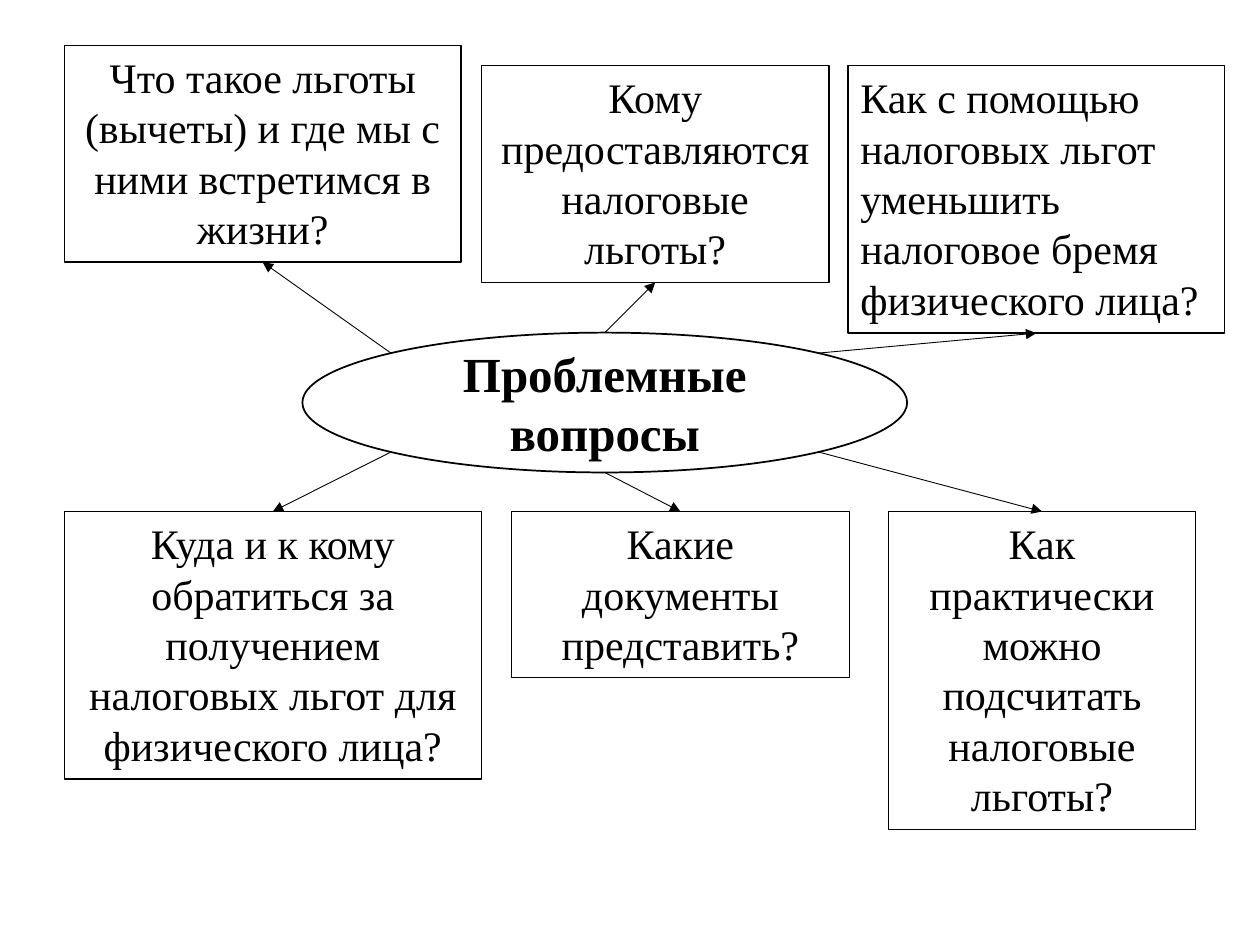
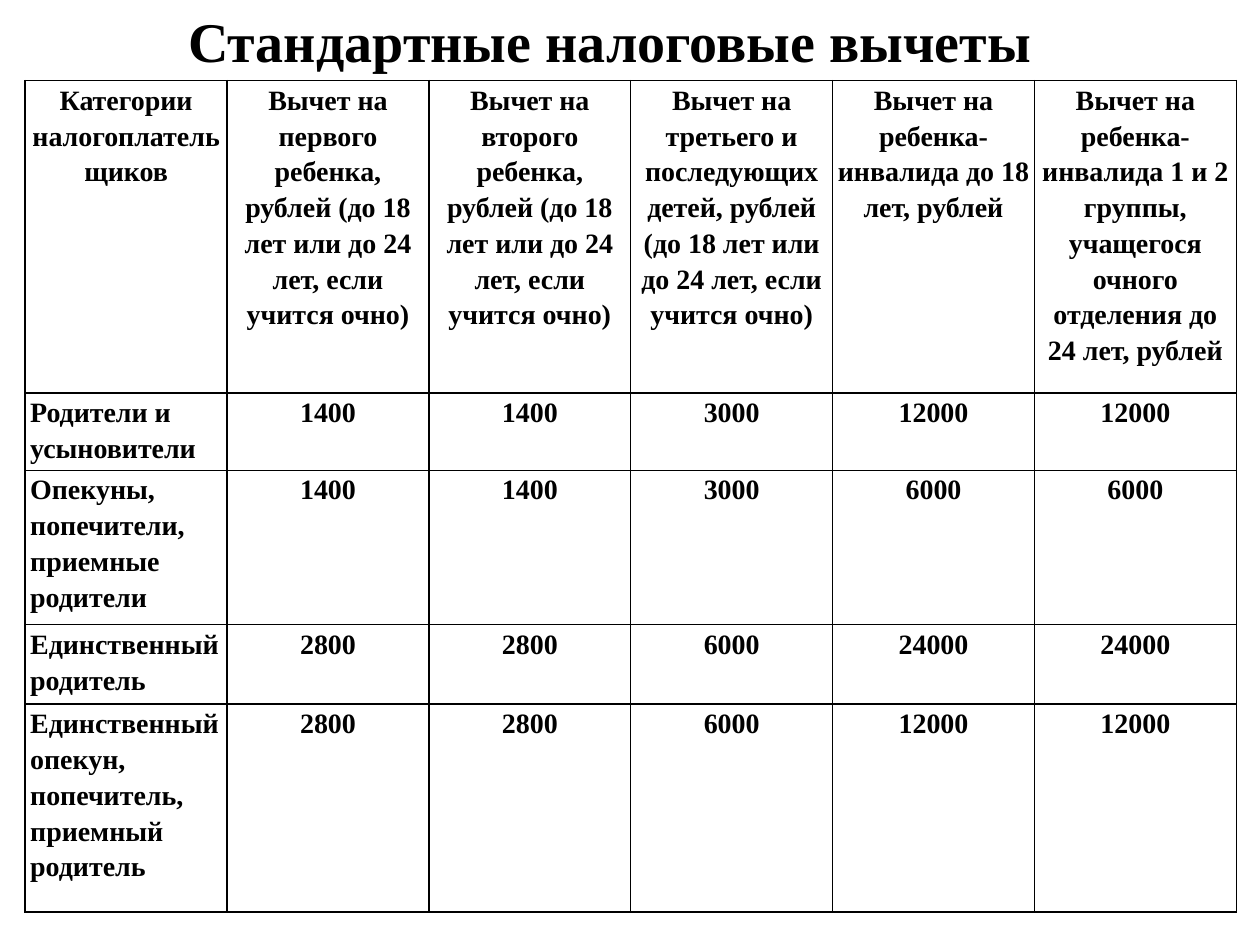
"""Build two slides on tax deductions: a question map and a table of amounts."""
import math

import pptx
import pptx.dml.color
import pptx.enum.dml
import pptx.enum.shapes
import pptx.enum.text
import pptx.oxml
import pptx.oxml.ns
import pptx.util

COLOURS = {"ink": "000000", "paper": "FFFFFF"}
FONT = "Times New Roman"
SLIDE_SIZE = (10, 7.5)
ALIGN = pptx.enum.text.PP_ALIGN
ANCHOR = pptx.enum.text.MSO_ANCHOR
FIT = pptx.enum.text.MSO_AUTO_SIZE
SHAPE = pptx.enum.shapes.MSO_SHAPE

HUB = {"text": "Проблемные вопросы", "at": (24, 35.2, 48, 14.8)}
QUESTIONS = [
    {"text": "Что такое льготы (вычеты) и где мы с ними встретимся в жизни?",
     "left": 5.1, "top": 4.8, "width": 31.5, "lines": 4, "angle": 225, "fill": "paper"},
    {"text": "Кому предоставляются налоговые льготы?",
     "left": 38.2, "top": 6.93, "width": 27.6, "lines": 4, "angle": 270},
    {"text": "Как с помощью налоговых льгот уменьшить налоговое бремя физического лица?",
     "left": 67.3, "top": 6.93, "width": 29.9, "lines": 5, "angle": 315, "align": ALIGN.LEFT},
    {"text": "Куда и к кому обратиться за получением налоговых льгот для физического лица?",
     "left": 5.1, "top": 54.13, "width": 33.1, "lines": 5, "angle": 135},
    {"text": "Какие документы представить?",
     "left": 40.6, "top": 54.13, "width": 26.8, "lines": 3, "angle": 90},
    {"text": "Как практически можно подсчитать налоговые льготы?",
     "left": 70.5, "top": 54.13, "width": 24.4, "lines": 6, "angle": 45},
]
LINE_SHARE, PADDING_SHARE = 5.37, 1.47

TITLE = {"text": "Стандартные налоговые вычеты", "at": (4.3, 0, 88.2, 8.53)}
AGES = "(до 18 лет или до 24 лет, если учится очно)"
DEDUCTIONS = [
    ("Категории налогоплательщиков",
     f"Вычет на первого ребенка, рублей {AGES}",
     f"Вычет на второго ребенка, рублей {AGES}",
     f"Вычет на третьего и последующих детей, рублей {AGES}",
     "Вычет на ребенка-инвалида до 18 лет, рублей",
     "Вычет на ребенка-инвалида 1 и 2 группы, учащегося очного отделения до 24 лет, рублей"),
    ("Родители и усыновители", 1400, 1400, 3000, 12000, 12000),
    ("Опекуны, попечители, приемные родители", 1400, 1400, 3000, 6000, 6000),
    ("Единственный родитель", 2800, 2800, 6000, 24000, 24000),
    ("Единственный опекун, попечитель, приемный родитель", 2800, 2800, 6000, 12000, 12000),
]
TABLE_CORNER = (2, 8.53)
COLUMN_SHARE = 16.02
ROW_SHARES = (33.07, 7.33, 16.27, 8.4, 22)
CELL_FORMAT = {"margin_left": pptx.util.Inches(0.04), "margin_right": pptx.util.Inches(0.04),
               "margin_top": 0, "margin_bottom": 0, "vertical_anchor": ANCHOR.TOP}


def across(share):
    return pptx.util.Inches(SLIDE_SIZE[0] * share / 100)


def down(share):
    return pptx.util.Inches(SLIDE_SIZE[1] * share / 100)


def place(left, top, width, height):
    return across(left), down(top), across(width), down(height)


def colour(name):
    return pptx.dml.color.RGBColor.from_string(COLOURS[name])


def apply(target, values):
    for name, value in values.items():
        setattr(target, name, value)


def write(frame, text, size, bold=False, align=ALIGN.CENTER, spacing=None):
    para = frame.paragraphs[0]
    apply(para, {"alignment": align, "line_spacing": spacing})
    span = para.add_run()
    span.text = str(text)
    apply(span.font, {"name": FONT, "size": pptx.util.Pt(size), "bold": bold})
    span.font.color.rgb = colour("ink")


def draw_line(line, width):
    line.color.rgb = colour("ink")
    line.width = pptx.util.Pt(width)


def add_box(page, kind, at, fill, line_width, frame_format):
    box = page.shapes.add_shape(kind, *place(*at))
    box.shadow.inherit = False
    if fill:
        box.fill.solid()
        box.fill.fore_color.rgb = colour(fill)
    else:
        box.fill.background()
    draw_line(box.line, line_width)
    apply(box.text_frame, {"word_wrap": True, **frame_format})
    return box


def add_question(page, question):
    height = question["lines"] * LINE_SHARE + PADDING_SHARE
    at = (question["left"], question["top"], question["width"], height)
    box = add_box(page, SHAPE.RECTANGLE, at, question.get("fill"), 0.75,
                  {"auto_size": FIT.SHAPE_TO_FIT_TEXT, "vertical_anchor": ANCHOR.TOP})
    write(box.text_frame, question["text"], 24, align=question.get("align", ALIGN.CENTER))
    return box


def add_arrow(page, hub, box, degrees):
    angle = math.radians(degrees)
    x = int(hub.left + hub.width / 2 * (1 + math.cos(angle)))
    y = int(hub.top + hub.height / 2 * (1 + math.sin(angle)))
    arrow = page.shapes.add_connector(pptx.enum.shapes.MSO_CONNECTOR.STRAIGHT, x, y, x, y)
    arrow.end_connect(box, 2 if box.top < hub.top else 0)
    draw_line(arrow.line, 0.5)
    head = pptx.oxml.parse_xml(f'<a:tailEnd {pptx.oxml.ns.nsdecls("a")} type="triangle"/>')
    arrow.line._get_or_add_ln().append(head)
    properties = arrow._element.spPr
    properties.append(pptx.oxml.parse_xml(f'<a:effectLst {pptx.oxml.ns.nsdecls("a")}/>'))


def add_borders(cell):
    properties = cell._tc.get_or_add_tcPr()
    for position, side in enumerate("LRTB"):
        border = pptx.oxml.parse_xml(
            f'<a:ln{side} {pptx.oxml.ns.nsdecls("a")} w="{pptx.util.Pt(1)}"><a:solidFill>'
            f'<a:srgbClr val="{COLOURS["ink"]}"/></a:solidFill></a:ln{side}>')
        properties.insert(position, border)


def build_question_map(page):
    boxes = [add_question(page, question) for question in QUESTIONS]
    hub = add_box(page, SHAPE.OVAL, HUB["at"], "paper", 1, {"vertical_anchor": ANCHOR.MIDDLE})
    write(hub.text_frame, HUB["text"], 28, bold=True)
    for question, box in zip(QUESTIONS, boxes):
        add_arrow(page, hub, box, question["angle"])


def build_deductions(page):
    title = page.shapes.add_textbox(*place(*TITLE["at"]))
    apply(title.text_frame, {"word_wrap": True, "auto_size": FIT.SHAPE_TO_FIT_TEXT})
    write(title.text_frame, TITLE["text"], 32, bold=True)

    columns = len(DEDUCTIONS[0])
    at = place(*TABLE_CORNER, COLUMN_SHARE * columns, sum(ROW_SHARES))
    table = page.shapes.add_table(len(DEDUCTIONS), columns, *at).table
    for column in table.columns:
        column.width = across(COLUMN_SHARE)
    for row, share in zip(table.rows, ROW_SHARES):
        row.height = down(share)
    for row_index, values in enumerate(DEDUCTIONS):
        for column_index, value in enumerate(values):
            cell = table.cell(row_index, column_index)
            apply(cell, CELL_FORMAT)
            cell.fill.background()
            add_borders(cell)
            is_category = row_index > 0 and column_index == 0
            write(cell.text_frame, value, 16, bold=True, spacing=1.15,
                  align=ALIGN.LEFT if is_category else ALIGN.CENTER)


def main():
    deck = pptx.Presentation()
    apply(deck, {"slide_width": across(100), "slide_height": down(100)})
    for build in (build_question_map, build_deductions):
        page = deck.slides.add_slide(deck.slide_layouts[6])
        page.background.fill.solid()
        page.background.fill.fore_color.rgb = colour("paper")
        build(page)
    deck.save("out.pptx")


if __name__ == "__main__":
    main()
